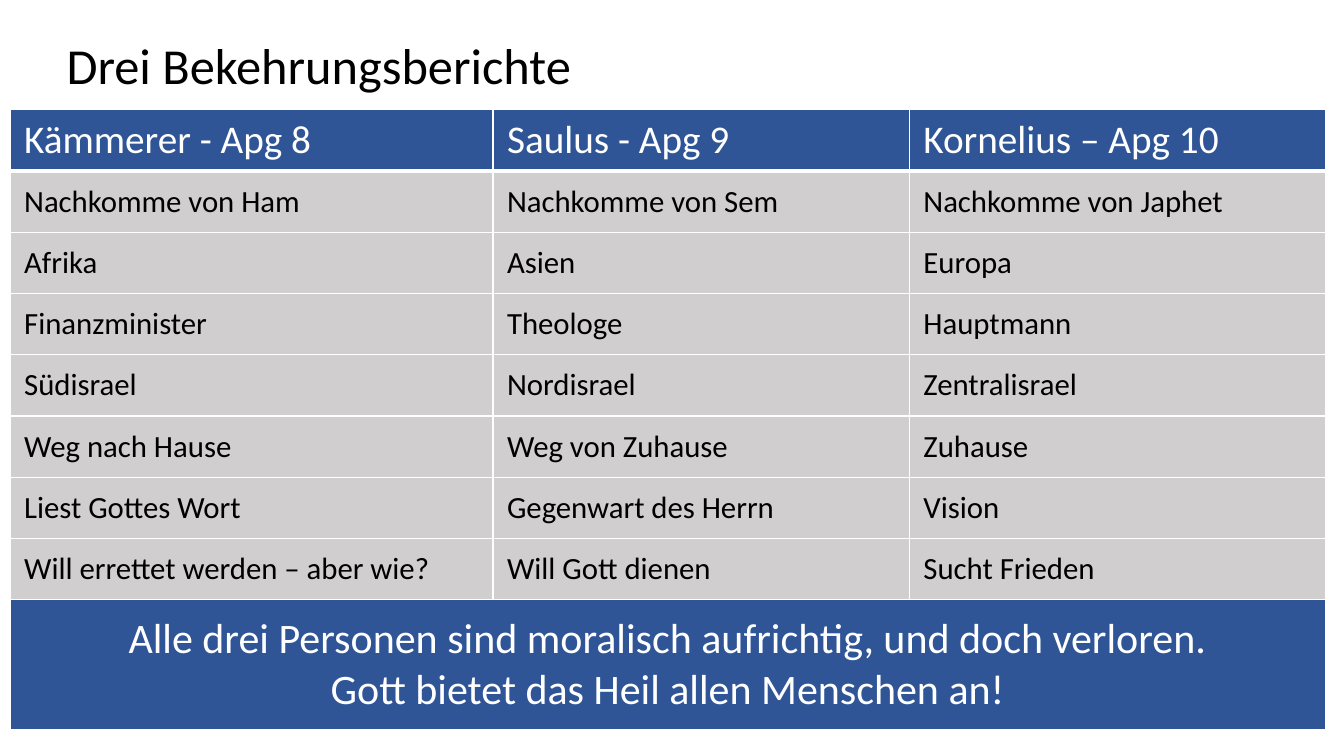
from dataclasses import dataclass
from typing import Any

from lxml import etree
from pptx import Presentation, util as u
from pptx.dml.color import RGBColor
from pptx.enum import text
from pptx.oxml import ns

BLACK = RGBColor(0x00, 0x00, 0x00)
WHITE = RGBColor(0xFF, 0xFF, 0xFF)
BLUE = RGBColor(0x2F, 0x55, 0x97)
GREY = RGBColor(0xD0, 0xCE, 0xCE)

TITLE_ONLY_LAYOUT = 5
COLUMN_WIDTHS = [35.93, 30.98, 30.98]
ROW_HEIGHT = 8.1
CONCLUSION_HEIGHT = 17.2

HEADINGS = ["Kämmerer - Apg 8", "Saulus - Apg 9", "Kornelius – Apg 10"]
COMPARISONS = [
    ["Nachkomme von Ham", "Nachkomme von Sem", "Nachkomme von Japhet"],
    ["Afrika", "Asien", "Europa"],
    ["Finanzminister", "Theologe", "Hauptmann"],
    ["Südisrael", "Nordisrael", "Zentralisrael"],
    ["Weg nach Hause", "Weg von Zuhause", "Zuhause"],
    ["Liest Gottes Wort", "Gegenwart des Herrn", "Vision"],
    ["Will errettet werden – aber wie?", "Will Gott dienen", "Sucht Frieden"],
]
CONCLUSION = [
    "Alle drei Personen sind moralisch aufrichtig, und doch verloren.",
    "Gott bietet das Heil allen Menschen an!",
]


@dataclass
class SlideBuilder:
    """Places elements by percentages of the slide's width and height."""

    presentation: Any
    slide: Any
    font: str = "Calibri"

    def across(self, percent):
        return round(self.presentation.slide_width * percent / 100)

    def down(self, percent):
        return round(self.presentation.slide_height * percent / 100)

    def add_lines(self, frame, lines, size, color, align=text.PP_ALIGN.LEFT):
        for index, line in enumerate(lines):
            paragraph = frame.add_paragraph() if index else frame.paragraphs[0]
            paragraph.alignment = align
            run = paragraph.add_run()
            run.text = line
            run.font.name = self.font
            run.font.size = u.Pt(size)
            run.font.color.rgb = color

    def title(self, line, left, top, width, height):
        shape = self.slide.shapes.title
        shape.left, shape.top = self.across(left), self.down(top)
        shape.width, shape.height = self.across(width), self.down(height)
        frame = shape.text_frame
        frame.word_wrap = False
        frame.auto_size = text.MSO_AUTO_SIZE.SHAPE_TO_FIT_TEXT
        frame.vertical_anchor = text.MSO_ANCHOR.TOP
        self.add_lines(frame, [line], 36, BLACK)

    def table(self, left, top, widths, heights):
        table = self.slide.shapes.add_table(
            len(heights), len(widths), self.across(left), self.down(top),
            self.across(sum(widths)), self.down(sum(heights))).table
        table.first_row = table.horz_banding = False
        for column, width in zip(table.columns, widths):
            column.width = self.across(width)
        for row, height in zip(table.rows, heights):
            row.height = self.down(height)
        return table

    def borders(self, cell, top, bottom):
        properties = cell._tc.get_or_add_tcPr()
        for side, points in zip("LRTB", (1, 1, top, bottom)):
            line = etree.SubElement(properties, ns.qn(f"a:ln{side}"), w=str(u.Pt(points)))
            fill = etree.SubElement(line, ns.qn("a:solidFill"))
            etree.SubElement(fill, ns.qn("a:srgbClr"), val=str(WHITE))

    def cell(self, cell, fill, top=1, bottom=1):
        self.borders(cell, top, bottom)
        cell.fill.solid()
        cell.fill.fore_color.rgb = fill
        cell.vertical_anchor = text.MSO_ANCHOR.MIDDLE
        cell.margin_left = cell.margin_right = u.Inches(0.14)
        cell.margin_top = cell.margin_bottom = 0


def main():
    presentation = Presentation()
    presentation.slide_width = u.Inches(13.33)
    presentation.slide_height = u.Inches(7.5)
    layout = presentation.slide_layouts[TITLE_ONLY_LAYOUT]
    builder = SlideBuilder(presentation, presentation.slides.add_slide(layout))

    builder.title("Drei Bekehrungsberichte", 4.2, 3.87, 39.38, 9.47)
    body_rows = [HEADINGS, *COMPARISONS]
    last = len(body_rows)
    table = builder.table(0.75, 14.53, COLUMN_WIDTHS,
                          [ROW_HEIGHT] * last + [CONCLUSION_HEIGHT])

    for row, entries in enumerate(body_rows):
        heading = row == 0
        for column, entry in enumerate(entries):
            cell = table.cell(row, column)
            builder.cell(cell, BLUE if heading else GREY,
                         top=3 if row == 1 else 1, bottom=3 if heading else 1)
            builder.add_lines(cell.text_frame, [entry], 28 if heading else 22,
                              WHITE if heading else BLACK)

    for column in range(len(COLUMN_WIDTHS)):
        builder.cell(table.cell(last, column), BLUE)
    conclusion = table.cell(last, 0)
    conclusion.merge(table.cell(last, len(COLUMN_WIDTHS) - 1))
    builder.add_lines(conclusion.text_frame, CONCLUSION, 30, WHITE, text.PP_ALIGN.CENTER)

    presentation.save("out.pptx")


if __name__ == "__main__":
    main()
